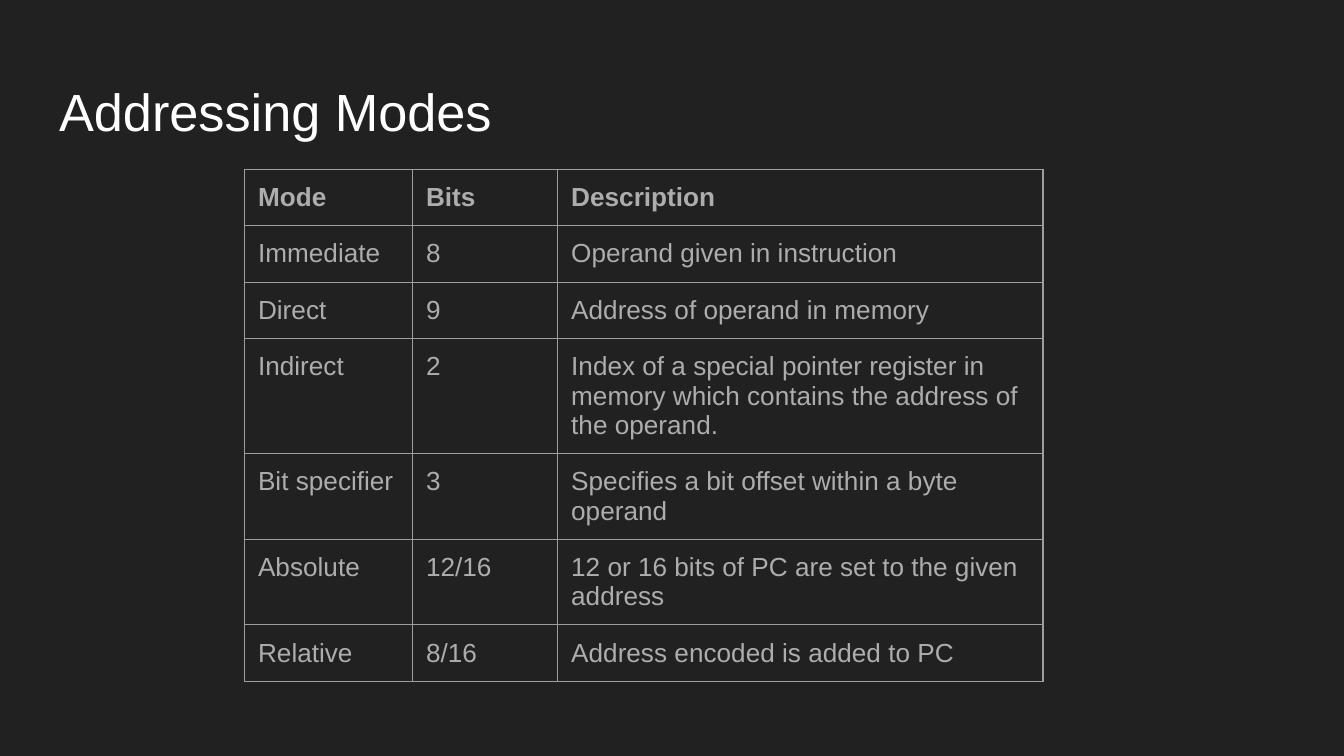
from lxml import etree
from pptx import Presentation
from pptx import util as u
from pptx.dml.color import RGBColor
from pptx.enum import text
from pptx.oxml.ns import qn

# Content
TITLE = "Addressing Modes"
ROWS = [
    ("Mode", "Bits", "Description"),
    ("Immediate", "8", "Operand given in instruction"),
    ("Direct", "9", "Address of operand in memory"),
    ("Indirect", "2", "Index of a special pointer register in memory "
                      "which contains the address of the operand."),
    ("Bit specifier", "3", "Specifies a bit offset within a byte operand"),
    ("Absolute", "12/16", "12 or 16 bits of PC are set to the given address"),
    ("Relative", "8/16", "Address encoded is added to PC"),
]

# Style and grid, in inches
HUES = {"back": "212121", "title": "FFFFFF", "body": "ADADAD", "line": "9E9E9E"}
FONT = "Arial"
WIDE = 10
HIGH = WIDE * 9 / 16
EDGE = 0.34
LEFT, TOP = 1.82, 1.26
COLS = (1.25, 1.08, 3.61)
ROW = 0.42
PAD = u.Inches(0.1)


def style(para, size, hue, bold=False):
    for run in para.runs:
        run.font.name = FONT
        run.font.size = u.Pt(size)
        run.font.bold = bold
        run.font.color.rgb = RGBColor.from_string(HUES[hue])


def pad(part):
    part.margin_left = part.margin_right = PAD
    part.margin_top = part.margin_bottom = PAD


def border(cell):
    props = cell._tc.get_or_add_tcPr()
    for i, side in enumerate(("lnL", "lnR", "lnT", "lnB")):
        line = etree.Element(qn("a:" + side), w=str(u.Pt(0.75)))
        fill = etree.SubElement(line, qn("a:solidFill"))
        etree.SubElement(fill, qn("a:srgbClr"), val=HUES["line"])
        props.insert(i, line)


def main():
    prs = Presentation()
    prs.slide_width, prs.slide_height = u.Inches(WIDE), u.Inches(HIGH)
    slide = prs.slides.add_slide(prs.slide_layouts[5])
    back = slide.background.fill
    back.solid()
    back.fore_color.rgb = RGBColor.from_string(HUES["back"])

    # Title
    title = slide.shapes.title
    title.left, title.top = u.Inches(EDGE), u.Inches(0.49)
    title.width, title.height = u.Inches(WIDE - 2 * EDGE), u.Inches(0.63)
    frame = title.text_frame
    frame.text = TITLE
    frame.word_wrap = True
    frame.auto_size = text.MSO_AUTO_SIZE.NONE
    frame.vertical_anchor = text.MSO_ANCHOR.TOP
    pad(frame)
    frame.paragraphs[0].alignment = text.PP_ALIGN.LEFT
    style(frame.paragraphs[0], 28, "title")

    # Table of modes
    box = (LEFT, TOP, sum(COLS), ROW * len(ROWS))
    table = slide.shapes.add_table(
        len(ROWS), len(COLS), *(u.Inches(n) for n in box)).table
    table.horz_banding = False
    for col, width in zip(table.columns, COLS):
        col.width = u.Inches(width)
    for r, row in enumerate(ROWS):
        table.rows[r].height = u.Inches(ROW)
        for c, words in enumerate(row):
            cell = table.cell(r, c)
            cell.text_frame.text = words
            cell.fill.background()
            pad(cell)
            border(cell)
            style(cell.text_frame.paragraphs[0], 14, "body", bold=r == 0)

    prs.save("out.pptx")


if __name__ == "__main__":
    main()
